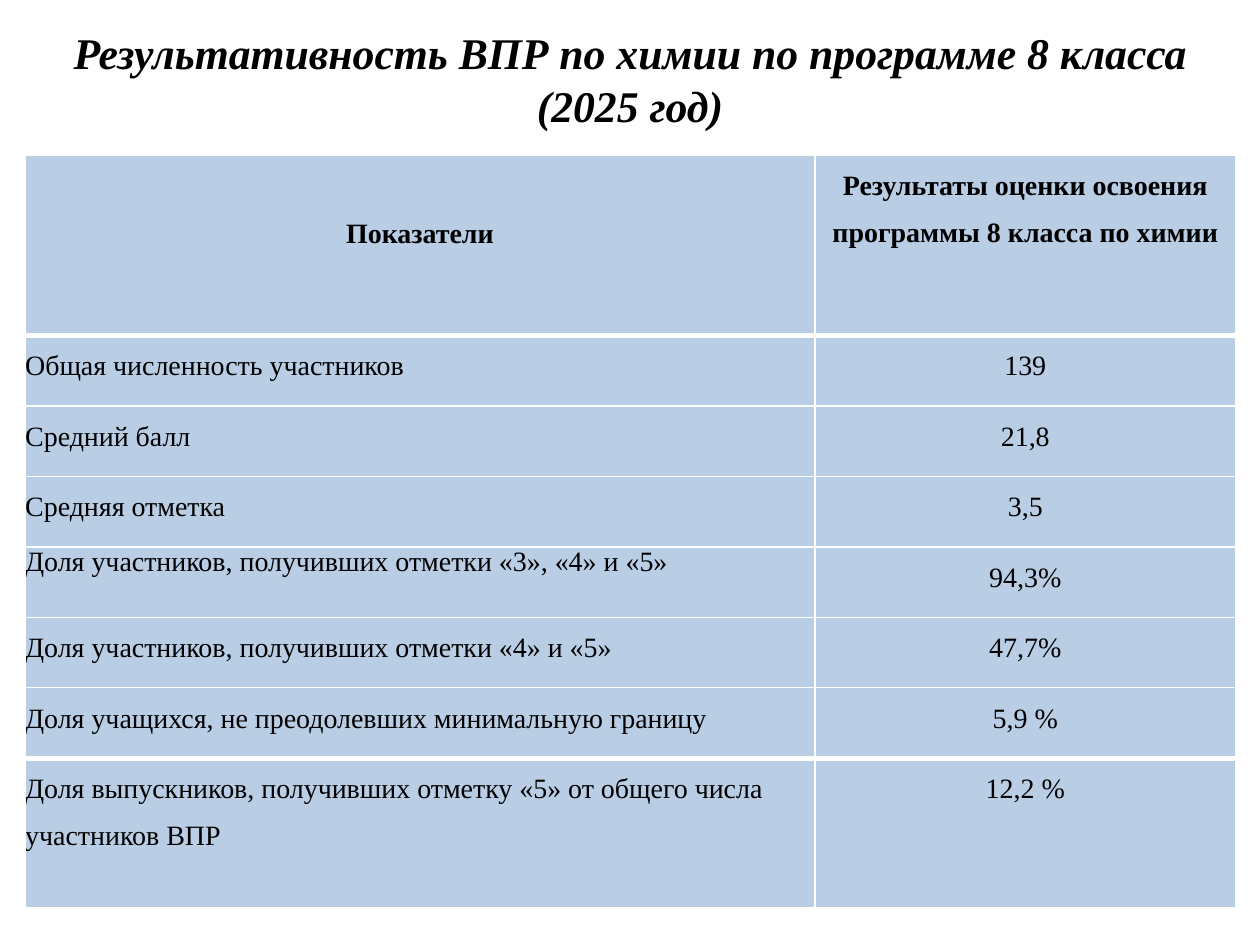
from lxml import etree
from pptx import Presentation
from pptx.dml.color import RGBColor
from pptx.enum.text import MSO_ANCHOR, MSO_AUTO_SIZE, PP_ALIGN
from pptx.oxml.ns import qn
from pptx.util import Pt

LEFT, CENTER = PP_ALIGN.LEFT, PP_ALIGN.CENTER
TOP = MSO_ANCHOR.TOP
NO_AUTOFIT = MSO_AUTO_SIZE.NONE

# Content
TITLE = "Результативность ВПР по химии по программе 8 класса (2025 год)"
HEADER = ("Показатели", "Результаты оценки освоения программы 8 класса по химии")
RESULTS = [
    ("Общая численность участников", "139"),
    ("Средний балл", "21,8"),
    ("Средняя отметка", "3,5"),
    ("Доля участников, получивших отметки «3», «4» и «5»", "94,3%"),
    ("Доля участников, получивших отметки «4» и «5»", "47,7%"),
    ("Доля учащихся, не преодолевших минимальную границу", "5,9 %"),
    ("Доля выпускников, получивших отметку «5» от общего числа участников ВПР",
     "12,2 %"),
]
SINGLE_SPACED_ROW = 4

# Theme and geometry, in points
THEME = {"font": "Times New Roman", "text": "000000", "cell": "B9CDE5",
         "border": "FFFFFF", "title_size": 25, "body_size": 16}
TITLE_BOX = (36, 15, 648, 97)
TABLE_LEFT, TABLE_TOP = 14.4, 88.8
COLUMN_WIDTHS = (451.2, 240.6)
HEADER_HEIGHT, ROW_HEIGHT, LAST_HEIGHT = 102.8, 40.3, 85.5
HEADER_DROP = 27
THIN, THICK = 1, 3


def write(frame, text, *, size, bold=False, italic=False, align=LEFT, spacing=1.0):
    para = frame.paragraphs[0]
    para.alignment = align
    para.line_spacing = spacing
    span = para.add_run()
    span.text = text
    font = span.font
    font.name, font.size = THEME["font"], Pt(size)
    font.bold, font.italic = bold, italic
    font.color.rgb = RGBColor.from_string(THEME["text"])


def set_margins(item, top=0):
    item.margin_left = item.margin_right = item.margin_bottom = 0
    item.margin_top = Pt(top)


def set_borders(cell, top=THIN, bottom=THIN):
    properties = cell._tc.get_or_add_tcPr()
    sides = (("a:lnL", THIN), ("a:lnR", THIN), ("a:lnT", top), ("a:lnB", bottom))
    for index, (tag, width) in enumerate(sides):
        line = etree.Element(qn(tag), w=str(Pt(width)))
        fill = etree.SubElement(line, qn("a:solidFill"))
        etree.SubElement(fill, qn("a:srgbClr"), val=THEME["border"])
        properties.insert(index, line)


deck = Presentation()
deck.slide_width, deck.slide_height = Pt(720), Pt(540)
page = deck.slides.add_slide(deck.slide_layouts[5])

# Title
title = page.shapes.title
title.left, title.top, title.width, title.height = map(Pt, TITLE_BOX)
frame = title.text_frame
frame.auto_size = NO_AUTOFIT
frame.word_wrap = True
frame.vertical_anchor = TOP
set_margins(frame)
write(frame, TITLE, size=THEME["title_size"], bold=True, italic=True, align=CENTER)

# Results table
rows = [HEADER] + RESULTS
last = len(rows) - 1
heights = [HEADER_HEIGHT] + [ROW_HEIGHT] * (last - 1) + [LAST_HEIGHT]
table = page.shapes.add_table(
    len(rows), len(HEADER), Pt(TABLE_LEFT), Pt(TABLE_TOP),
    Pt(sum(COLUMN_WIDTHS)), Pt(sum(heights))).table
for column, width in zip(table.columns, COLUMN_WIDTHS):
    column.width = Pt(width)

for r, (values, height) in enumerate(zip(rows, heights)):
    table.rows[r].height = Pt(height)
    for c, value in enumerate(values):
        cell = table.cell(r, c)
        is_header = r == 0
        set_margins(cell, top=HEADER_DROP if is_header and c == 0 else 0)
        cell.vertical_anchor = TOP
        cell.fill.solid()
        cell.fill.fore_color.rgb = RGBColor.from_string(THEME["cell"])
        set_borders(cell, top=THICK if r in (1, last) else THIN,
                    bottom=THICK if r in (0, last - 1) else THIN)
        write(cell.text_frame, value, size=THEME["body_size"], bold=is_header,
              align=CENTER if is_header or c else LEFT,
              spacing=1.0 if r == SINGLE_SPACED_ROW and c == 0 else 1.5)

deck.save("out.pptx")
